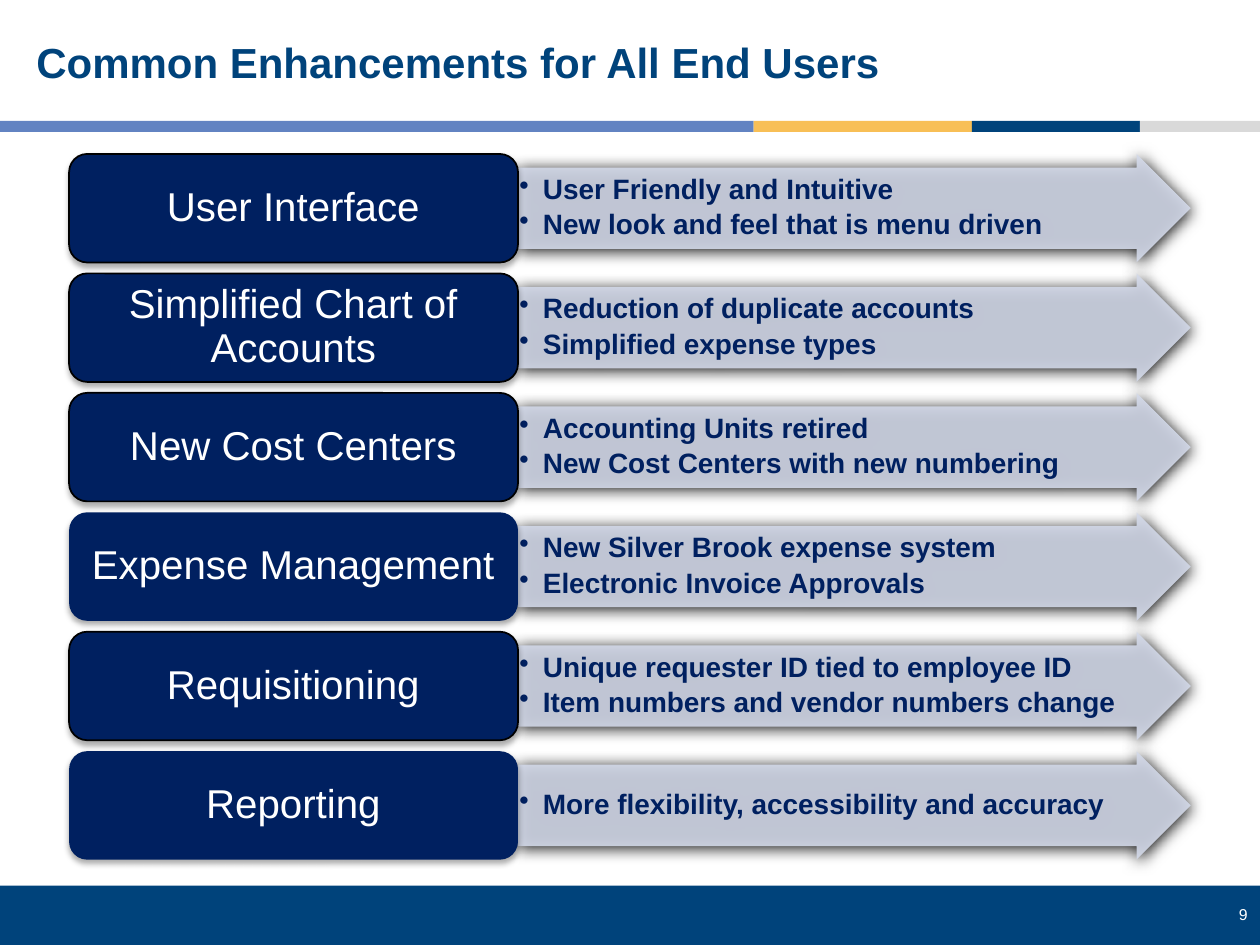
from dataclasses import dataclass

from lxml import etree
from pptx import Presentation
from pptx.dml.color import RGBColor
from pptx.enum.shapes import MSO_SHAPE
from pptx.enum.text import MSO_ANCHOR, PP_ALIGN
from pptx.oxml.ns import qn
from pptx.shapes.autoshape import Shape
from pptx.slide import Slide
from pptx.text.text import TextFrame
from pptx.util import Pt

RECTANGLE = MSO_SHAPE.RECTANGLE
ROUNDED = MSO_SHAPE.ROUNDED_RECTANGLE
ARROW = MSO_SHAPE.RIGHT_ARROW
MIDDLE, TOP = MSO_ANCHOR.MIDDLE, MSO_ANCHOR.TOP
LEFT, CENTER, RIGHT = PP_ALIGN.LEFT, PP_ALIGN.CENTER, PP_ALIGN.RIGHT


@dataclass(frozen=True)
class Theme:
    font: str = "Arial"
    brand_blue: str = "00437B"
    light_blue: str = "6283C2"
    gold: str = "F8BF56"
    grey: str = "D9D9D9"
    navy: str = "002060"
    arrow: str = "D3D9E9"
    black: str = "000000"
    white: str = "FFFFFF"
    title_size: float = 24
    topic_size: float = 23
    detail_size: float = 16
    number_size: float = 9


@dataclass(frozen=True)
class Box:
    left: float
    top: float
    width: float
    height: float


@dataclass(frozen=True)
class Shadow:
    opacity: int
    blur: float
    distance: float


@dataclass(frozen=True)
class Enhancement:
    topic: str
    details: tuple[str, ...]
    outlined: bool = True


THEME = Theme()
SLIDE_WIDTH, SLIDE_HEIGHT = 720, 540
FOOTER_TOP = 506
STRIPE_TOP, STRIPE_HEIGHT = 69.1, 6.2
STRIPES = ((0, THEME.light_blue), (430.7, THEME.gold),
           (555.4, THEME.brand_blue), (651.4, THEME.grey))

ROW_TOP, ROW_HEIGHT, ROW_PITCH = 88, 62, 68.25
TOPIC_LEFT, TOPIC_WIDTH, ARROW_WIDTH = 39.5, 256.5, 384.5
BULLET_INDENT = 13.5
TOPIC_SHADOW = Shadow(32, 3.5, 2.2)
ARROW_SHADOW = Shadow(100, 8.5, 1)

ENHANCEMENTS = (
    Enhancement("User Interface",
                ("User Friendly and Intuitive", "New look and feel that is menu driven")),
    Enhancement("Simplified Chart of Accounts",
                ("Reduction of duplicate accounts", "Simplified expense types")),
    Enhancement("New Cost Centers",
                ("Accounting Units retired", "New Cost Centers with new numbering")),
    Enhancement("Expense Management",
                ("New Silver Brook expense system", "Electronic Invoice Approvals"), False),
    Enhancement("Requisitioning",
                ("Unique requester ID tied to employee ID",
                 "Item numbers and vendor numbers change")),
    Enhancement("Reporting", ("More flexibility, accessibility and accuracy",), False),
)


def add_filled_shape(slide: Slide, kind: MSO_SHAPE, box: Box, color: str) -> Shape:
    shape = slide.shapes.add_shape(
        kind, Pt(box.left), Pt(box.top), Pt(box.width), Pt(box.height))
    shape.shadow.inherit = False
    shape.fill.solid()
    shape.fill.fore_color.rgb = RGBColor.from_string(color)
    shape.line.fill.background()
    return shape


def set_opacity(color_element: etree._Element, percent: int) -> None:
    etree.SubElement(color_element, qn("a:alpha")).set("val", str(percent * 1000))


def add_drop_shadow(shape: Shape, shadow: Shadow) -> None:
    effects = shape.element.spPr.find(qn("a:effectLst"))
    outer = etree.SubElement(effects, qn("a:outerShdw"), {
        "blurRad": str(Pt(shadow.blur)), "dist": str(Pt(shadow.distance)),
        "dir": "5400000", "rotWithShape": "0"})
    color = etree.SubElement(outer, qn("a:srgbClr"), {"val": THEME.black})
    set_opacity(color, shadow.opacity)


def prepare_frame(frame: TextFrame, anchor: MSO_ANCHOR,
                  side: float = 7.2, edge: float = 3.6) -> None:
    frame.word_wrap = True
    frame.vertical_anchor = anchor
    frame.margin_left = frame.margin_right = Pt(side)
    frame.margin_top = frame.margin_bottom = Pt(edge)


def write_lines(frame: TextFrame, lines: tuple[str, ...], size: float, color: str,
                align: PP_ALIGN, bold: bool = False, bulleted: bool = False) -> None:
    for index, line in enumerate(lines):
        paragraph = frame.paragraphs[0] if index == 0 else frame.add_paragraph()
        paragraph.alignment = align
        paragraph.line_spacing = 0.9
        if bulleted:
            paragraph.space_after = Pt(3)
            properties = paragraph._p.get_or_add_pPr()
            properties.set("marL", str(Pt(BULLET_INDENT)))
            properties.set("indent", str(-Pt(BULLET_INDENT)))
            etree.SubElement(properties, qn("a:buChar")).set("char", "•")
        run = paragraph.add_run()
        run.text = line
        run.font.name = THEME.font
        run.font.size = Pt(size)
        run.font.bold = bold
        run.font.color.rgb = RGBColor.from_string(color)


def add_label(slide: Slide, box: Box, text: str, size: float, color: str,
              align: PP_ALIGN, anchor: MSO_ANCHOR, bold: bool = False) -> None:
    label = slide.shapes.add_textbox(
        Pt(box.left), Pt(box.top), Pt(box.width), Pt(box.height))
    prepare_frame(label.text_frame, anchor)
    write_lines(label.text_frame, (text,), size, color, align, bold)


def add_stripes(slide: Slide) -> None:
    """Draw the divider; each stripe ends where the next begins."""
    ends = [left for left, _ in STRIPES[1:]] + [SLIDE_WIDTH]
    for (left, color), end in zip(STRIPES, ends):
        add_filled_shape(slide, RECTANGLE,
                         Box(left, STRIPE_TOP, end - left, STRIPE_HEIGHT), color)


def add_enhancement(slide: Slide, item: Enhancement, top: float) -> None:
    arrow = add_filled_shape(
        slide, ARROW, Box(TOPIC_LEFT + TOPIC_WIDTH, top, ARROW_WIDTH, ROW_HEIGHT),
        THEME.arrow)
    arrow.adjustments[0], arrow.adjustments[1] = 0.75, 0.5
    set_opacity(arrow.element.spPr.find(qn("a:solidFill")).find(qn("a:srgbClr")), 90)
    add_drop_shadow(arrow, ARROW_SHADOW)
    prepare_frame(arrow.text_frame, MIDDLE, 0.8, 0.8)
    write_lines(arrow.text_frame, item.details, THEME.detail_size, THEME.navy,
                LEFT, bold=True, bulleted=True)

    topic = add_filled_shape(
        slide, ROUNDED, Box(TOPIC_LEFT, top, TOPIC_WIDTH, ROW_HEIGHT), THEME.navy)
    if item.outlined:
        topic.line.color.rgb = RGBColor.from_string(THEME.black)
        topic.line.width = Pt(1)
    add_drop_shadow(topic, TOPIC_SHADOW)
    prepare_frame(topic.text_frame, MIDDLE)
    write_lines(topic.text_frame, (item.topic,), THEME.topic_size, THEME.white, CENTER)


def main() -> None:
    presentation = Presentation()
    presentation.slide_width, presentation.slide_height = Pt(SLIDE_WIDTH), Pt(SLIDE_HEIGHT)
    slide = presentation.slides.add_slide(presentation.slide_layouts[6])

    add_filled_shape(slide, RECTANGLE,
                     Box(0, FOOTER_TOP, SLIDE_WIDTH, SLIDE_HEIGHT - FOOTER_TOP),
                     THEME.brand_blue)
    add_label(slide, Box(670.3, 514.8, 49.7, 18), "9", THEME.number_size,
              THEME.white, RIGHT, TOP)
    add_stripes(slide)
    add_label(slide, Box(13.7, 12.2, 689, 49.7), "Common Enhancements for All End Users",
              THEME.title_size, THEME.brand_blue, LEFT, MIDDLE, bold=True)
    for row, item in enumerate(ENHANCEMENTS):
        add_enhancement(slide, item, ROW_TOP + row * ROW_PITCH)

    presentation.save("out.pptx")


if __name__ == "__main__":
    main()
